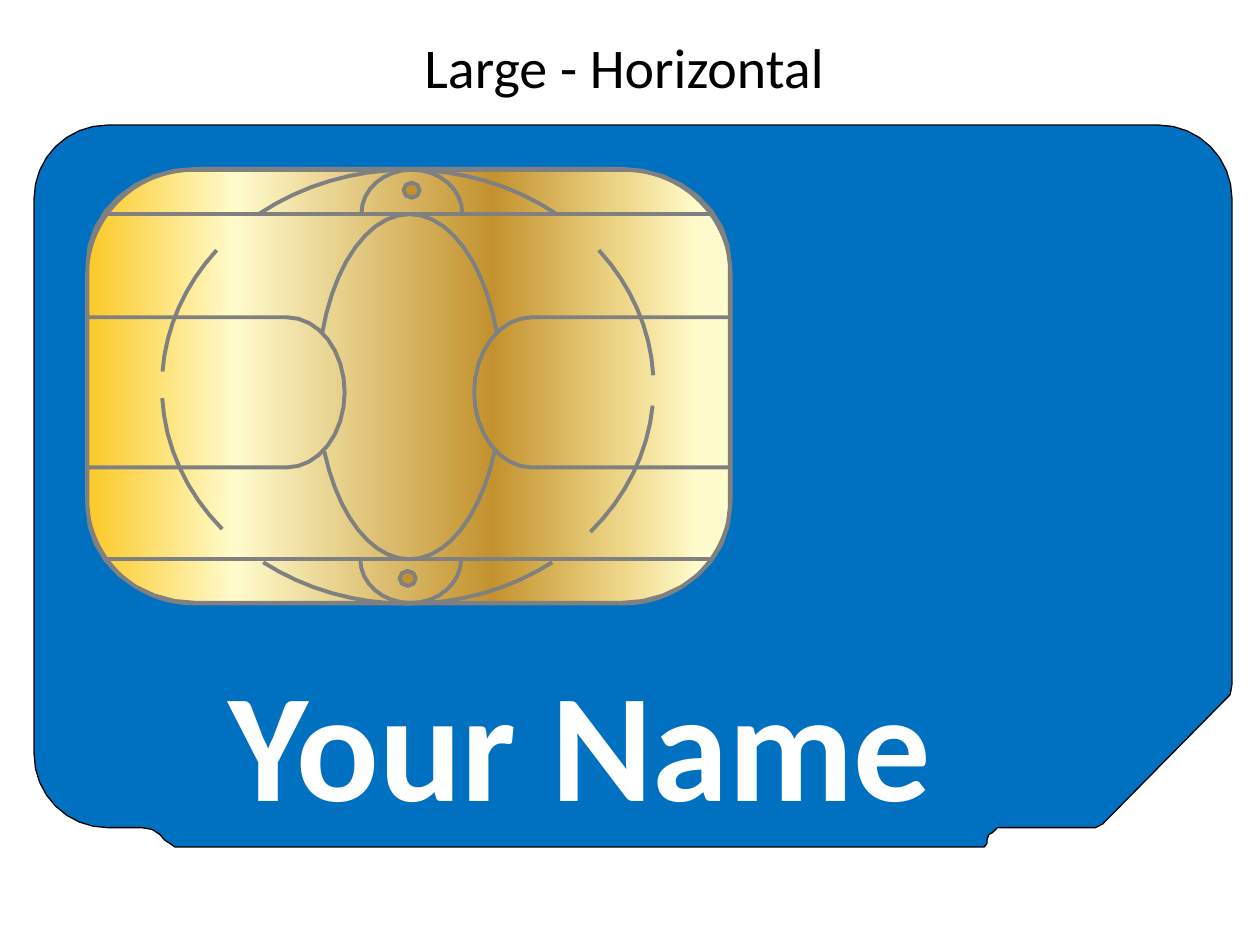
"""Build a slide showing a large horizontal SIM card with a gold chip."""
from math import cos, radians, sin

from lxml.etree import SubElement
from pptx import Presentation
from pptx.dml.color import RGBColor
from pptx.enum.shapes import MSO_CONNECTOR as Connector, MSO_SHAPE as Shape
from pptx.enum.text import MSO_AUTO_SIZE as AutoSize, PP_ALIGN as Align
from pptx.oxml.ns import qn
from pptx.util import Pt

THEME = {
    "card": RGBColor.from_string("0070C0"),
    "edge": RGBColor.from_string("000000"),
    "groove": RGBColor.from_string("808080"),
    "hole": RGBColor.from_string("C3922E"),
    "name": RGBColor.from_string("FFFFFF"),
    "title": RGBColor.from_string("000000"),
    "gold": [(0, "FBC926"), (23, "FFFBCC"), (63, "C3922E"), (83, "EED688"), (95, "FFFBCC")],
    "font": "Calibri",
    "name_size": Pt(88),
    "title_size": Pt(32),
    "groove_width": Pt(2.25),
}


def arc(center_x, center_y, radius_x, radius_y, start, end, steps=8):
    """Return points along an ellipse; angles run clockwise from the right."""
    angles = [radians(start + (end - start) * step / steps) for step in range(steps + 1)]
    return [(center_x + radius_x * cos(a), center_y + radius_y * sin(a)) for a in angles]


def draw(shapes, points, fill=None, line=THEME["groove"], width=THEME["groove_width"], close=False):
    """Draw a freeform through the points."""
    scaled = [(Pt(x), Pt(y)) for x, y in points]
    builder = shapes.build_freeform(*scaled[0])
    builder.add_line_segments(scaled[1:], close=close)
    outline = builder.convert_to_shape()
    outline.shadow.inherit = False
    if fill is None:
        outline.fill.background()
    else:
        outline.fill.solid()
        outline.fill.fore_color.rgb = fill
    outline.line.color.rgb = line
    outline.line.width = width


deck = Presentation()
deck.slide_width, deck.slide_height = Pt(720), Pt(540)
page = deck.slides.add_slide(deck.slide_layouts[6])
artwork = page.shapes.add_group_shape().shapes

card = (
    arc(61.5, 431, 42, 42, 90, 180)
    + arc(61.5, 113.5, 42, 42, 180, 270)
    + arc(662, 113.5, 42, 42, 270, 360)
    + [(704, 391), (703.5, 394), (703, 397), (701, 399)]
    + [(630, 471), (628, 472), (626, 473), (575, 473), (570, 473)]
    + [(569, 474), (567, 476), (565, 477), (564, 480), (564, 482), (562.5, 484)]
    + [(100, 484), (97, 482), (94, 480), (91.5, 477), (87, 474), (81, 473)]
)
draw(artwork, card, THEME["card"], THEME["edge"], Pt(0), close=True)

chip = artwork.add_shape(Shape.ROUNDED_RECTANGLE, Pt(49.7), Pt(97.2), Pt(367.9), Pt(247.7))
chip.adjustments[0] = 0.245
chip.shadow.inherit = False
chip.fill.gradient()
chip.fill.gradient_angle = 0
stops = chip._element.spPr.find(qn("a:gradFill")).find(qn("a:gsLst"))
for stop in list(stops):
    stops.remove(stop)
for percent, color in THEME["gold"]:
    stop = SubElement(stops, qn("a:gs"), pos=str(percent * 1000))
    SubElement(stop, qn("a:srgbClr"), val=color)
chip.line.color.rgb = THEME["groove"]
chip.line.width = Pt(2)

rim = []
for x, y, start in [(355, 290, 0), (112, 290, 90), (112, 151, 180), (355, 151, 270)]:
    rim += arc(x, y, 62, 54.5, start, start + 90)
draw(artwork, rim, close=True)

for start, end, steps in [(-53, -127, 16), (-3, -39, 8), (139, 177, 8),
                          (54, 126, 16), (5, 42, 8), (219, 184, 8)]:
    draw(artwork, arc(233, 221, 140.5, 124, start, end, steps))

for start, end in [(22, 158), (-162, -18)]:
    draw(artwork, arc(234, 221, 52.5, 98.6, start, end, 20))

for edge, center, start, end in [(49.7, 164, -90, 90), (418, 304, 270, 90)]:
    bend = arc(center, 224.2, 33, 42.9, start, end, 16)
    draw(artwork, [(edge, bend[0][1]), *bend, (edge, bend[-1][1])])

for left, y in [(59.8, 122.4), (61.9, 319.7)]:
    groove = artwork.add_connector(Connector.STRAIGHT, Pt(left), Pt(y), Pt(407.5), Pt(y))
    groove.line.color.rgb = THEME["groove"]
    groove.line.width = THEME["groove_width"]
    SubElement(groove._element.spPr, qn("a:effectLst"))

for x, y, end in [(235.4, 121.9, -180), (234.7, 319.7, 180)]:
    draw(artwork, arc(x, y, 28.8, 24.9, 0, end, 16))

for x, y in [(235.2, 108.7), (233, 330.5)]:
    draw(artwork, arc(x, y, 4.6, 4.3, 0, 360), THEME["hole"], close=True)

labels = [
    (artwork, "Your Name", (123.8, 366.5, 420.5, 113.8), "name", True, Align.LEFT),
    (page.shapes, "Large - Horizontal ", (234, 15.1, 252.7, 46.1), "title", False, Align.CENTER),
]
for shapes, words, bounds, role, bold, align in labels:
    box = shapes.add_textbox(*[Pt(length) for length in bounds])
    box.text_frame.word_wrap = False
    box.text_frame.auto_size = AutoSize.SHAPE_TO_FIT_TEXT
    box.text_frame.text = words
    para = box.text_frame.paragraphs[0]
    para.alignment = align
    span = para.runs[0]
    span.font.name = THEME["font"]
    span.font.size = THEME[role + "_size"]
    span.font.bold = bold
    span.font.color.rgb = THEME[role]

deck.save("out.pptx")
